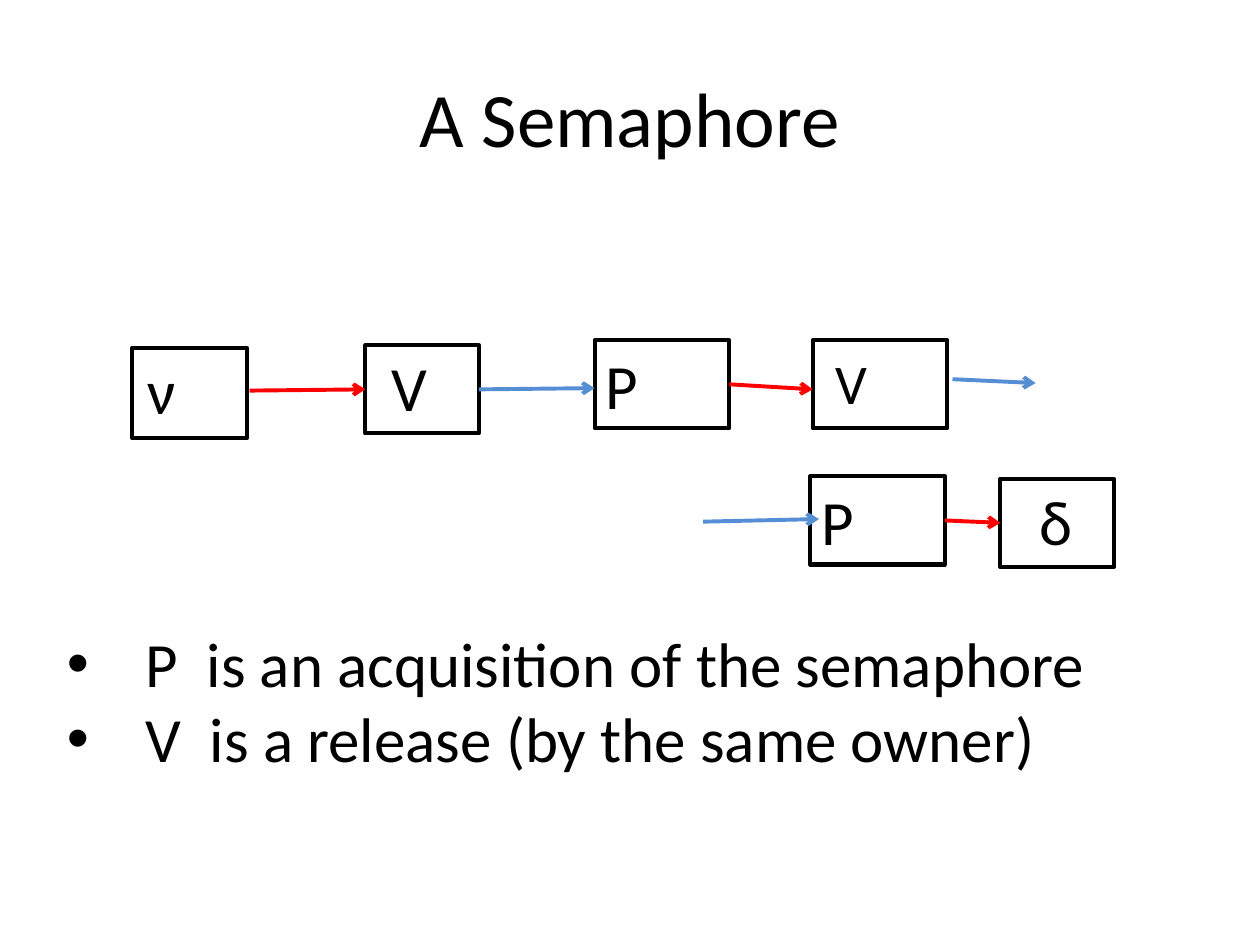
from dataclasses import dataclass

from lxml import etree
from pptx import Presentation
from pptx.dml.color import RGBColor
from pptx.enum import shapes, text
from pptx.oxml import ns
from pptx.util import Pt


@dataclass(frozen=True)
class Theme:
    font: str = "Calibri"
    ink: RGBColor = RGBColor(0, 0, 0)
    red: RGBColor = RGBColor(0xFF, 0, 0)
    blue: RGBColor = RGBColor(0x55, 0x8E, 0xD5)
    title: float = 44
    body: float = 36
    small: float = 32
    edge: float = 2.36
    wire: float = 2.25


THEME = Theme()

# name: (symbol, size, box left, top, width, height, label left, top)
NODES = {
    "start": ("ν", THEME.body, 75.6, 198.7, 65.5, 51.8, 77, 197.3),
    "free": ("V", THEME.body, 208.8, 197.3, 64.8, 50.4, 216.7, 195.8),
    "take": ("P", THEME.body, 339.8, 194.4, 77, 50.4, 339.1, 194.4),
    "free2": ("V", THEME.small, 464.4, 194.4, 77, 50.4, 470.2, 195.8),
    "take2": ("P", THEME.body, 463, 272.2, 77, 50.4, 462.2, 272.2),
    "end": ("δ", THEME.body, 571.7, 273.6, 64.8, 50.4, 586.8, 272.2),
}

# Each end is a node name, or a free point
ARROWS = [
    ((142.6, 223.2), "free", THEME.red),
    ("free", (339.8, 221.8), THEME.blue),
    ("take", (464.4, 222.5), THEME.red),
    ((544.3, 216.7), (591.8, 218.9), THEME.blue),
    ((401.8, 298.1), (468, 296.6), THEME.blue),
    ("take2", "end", THEME.red),
]

POINTS = [
    "P  is an acquisition of the semaphore",
    "V  is a release (by the same owner)",
]


def place(shape, left, top, width, height):
    shape.left, shape.top = Pt(left), Pt(top)
    shape.width, shape.height = Pt(width), Pt(height)


def add_run(para, words, size):
    run = para.add_run()
    run.text = words
    run.font.name, run.font.size = THEME.font, Pt(size)
    run.font.color.rgb = THEME.ink


def add_title(slide, words):
    title = slide.shapes.title
    place(title, 36, 21.6, 648, 90)
    frame = title.text_frame
    frame.vertical_anchor = text.MSO_ANCHOR.MIDDLE
    para = frame.paragraphs[0]
    para.alignment = text.PP_ALIGN.CENTER
    add_run(para, words, THEME.title)


def add_list(slide, lines):
    body = slide.placeholders[1]
    place(body, 31, 355, 648, 90)
    frame = body.text_frame
    frame.auto_size = text.MSO_AUTO_SIZE.NONE
    frame.vertical_anchor = text.MSO_ANCHOR.MIDDLE
    for i, line in enumerate(lines):
        para = frame.add_paragraph() if i else frame.paragraphs[0]
        para.space_before = Pt(0)
        props = para._p.get_or_add_pPr()
        props.set("marL", str(Pt(45)))
        props.set("indent", str(-Pt(45)))
        etree.SubElement(props, ns.qn("a:buChar"), char="•")
        add_run(para, line, THEME.body)


def add_box(slide, *area):
    box = slide.shapes.add_shape(
        shapes.MSO_SHAPE.RECTANGLE, *map(Pt, area))
    box.shadow.inherit = False
    box.fill.background()
    box.line.color.rgb = THEME.ink
    box.line.width = Pt(THEME.edge)
    return box


def add_label(slide, words, size, left, top):
    label = slide.shapes.add_textbox(Pt(left), Pt(top), Pt(36), Pt(51))
    label.text_frame.word_wrap = True
    add_run(label.text_frame.paragraphs[0], words, size)


def add_arrow(slide, boxes, start, end, color):
    """Join right side to left side where an end is a node name."""
    first = (0, 0) if start in boxes else start
    last = (0, 0) if end in boxes else end
    wire = slide.shapes.add_connector(
        shapes.MSO_CONNECTOR.STRAIGHT, *map(Pt, first + last))
    if start in boxes:
        wire.begin_connect(boxes[start], 3)
    if end in boxes:
        wire.end_connect(boxes[end], 1)
    wire.line.color.rgb = color
    wire.line.width = Pt(THEME.wire)
    etree.SubElement(wire.line._get_or_add_ln(), ns.qn("a:tailEnd"),
                     type="arrow")
    etree.SubElement(wire._element.spPr, ns.qn("a:effectLst"))


def main():
    deck = Presentation()
    deck.slide_width, deck.slide_height = Pt(720), Pt(540)
    slide = deck.slides.add_slide(deck.slide_layouts[1])
    add_title(slide, "A Semaphore")
    add_list(slide, POINTS)
    boxes = {}
    for name, (symbol, size, *area, left, top) in NODES.items():
        boxes[name] = add_box(slide, *area)
        add_label(slide, symbol, size, left, top)
    for start, end, color in ARROWS:
        add_arrow(slide, boxes, start, end, color)
    deck.save("out.pptx")


if __name__ == "__main__":
    main()
